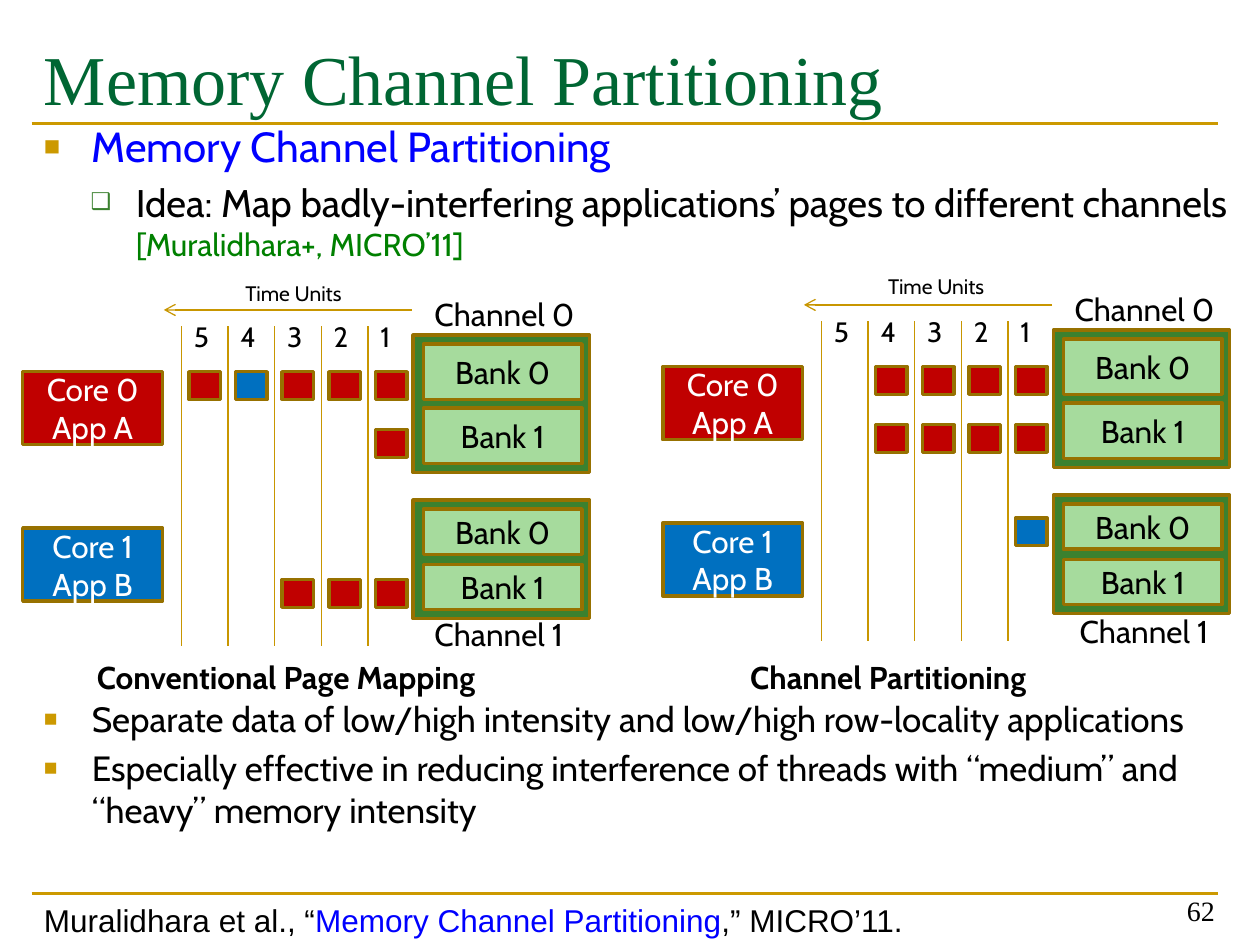
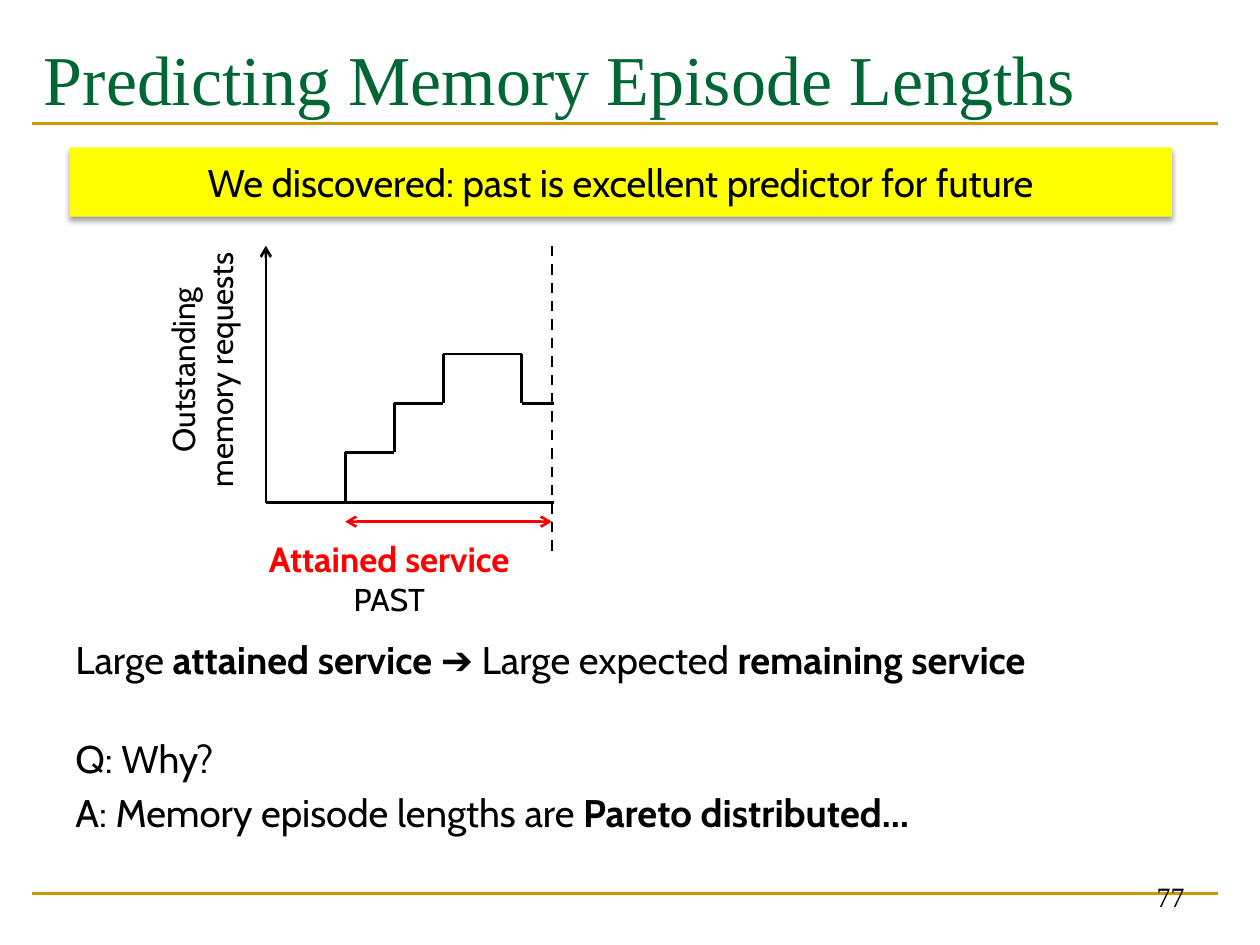
from itertools import pairwise
from lxml import etree
from pptx import Presentation, util as u
from pptx.dml.color import RGBColor
from pptx.enum import dml, shapes, text
from pptx.oxml.ns import qn

# Shared look
HUES = dict(gold="CC9900", axis="C89600", edge="977100", title="006633",
            green="3B812F", bank="A6DB9D", cite="008000", link="0000FF",
            red="C00000", blue="0070C0", hot="FF0000", note="FFFF00",
            black="000000", white="FFFFFF")
SERIF, SANS, ARIAL = "Times New Roman", "Cabin", "Arial"
LEFT, RIGHT, RULES = 0.25, 9.67, (0.98, 7.09)
ALIGN = dict(l=text.PP_ALIGN.LEFT, c=text.PP_ALIGN.CENTER, r=text.PP_ALIGN.RIGHT)
ANCHOR = dict(t=text.MSO_ANCHOR.TOP, m=text.MSO_ANCHOR.MIDDLE, b=text.MSO_ANCHOR.BOTTOM)

# Bullets: glyph, colour, size in percent, left edge, hanging indent
SQUARE = ("■", "gold", 65, 0.38, 0.38)
HOLLOW = ("❑", "green", 60, 0.73, 0.36)

# Content of the channel slide
PAPER = "Memory Channel Partitioning"
INTRO = [[(PAPER, dict(size=24, color="link"))],
         ["Idea: Map badly-interfering applications’ pages to different channels ",
          ("[Muralidhara+, MICRO’11]", dict(size=18, color="cite"))]]
POINTS = ["Separate data of low/high intensity and low/high row-locality applications",
          "Especially effective in reducing interference of threads with "
          "“medium” and “heavy” memory intensity"]
SOURCE = [["Muralidhara et al., “", (PAPER, dict(color="link")), ",” MICRO’11."]]

CORES = [(["Core 0", "App A"], "red", 2.95), (["Core 1", "App B"], "blue", 4.19)]
# Channel: top and height, then top and height of each bank
CHANNELS = [((2.66, 1.09), [(2.73, 0.44), (3.24, 0.44)]),
            ((3.97, 0.94), [(4.04, 0.36), (4.48, 0.36)])]
ROWS = (2.95, 3.41, 4.15, 4.6)  # request rows, one per bank
STEP, UNITS = 0.37, 5           # width and number of time units
# Requests per bank run from time unit 1 upwards (r = red, b = blue)
PANELS = [dict(shift=(0, 0), name="Conventional Page Mapping", mid=2.27,
               time=(1.85, 2.18), last=(3.35, 4.83),
               queues=("rrrbr", "r", "", "rrr")),
          dict(shift=(5.08, -0.04), name="Channel Partitioning", mid=7.05,
               time=(6.95, 2.12), last=(8.47, 4.81),
               queues=("rrrr", "rrrr", "b", ""))]

# Content of the episode slide
FOUND = "We discovered: past is excellent predictor for future"
BOLD = dict(bold=True)
REASON = [["Large ", ("attained service ", BOLD), "➔ Large expected ",
           ("remaining service", BOLD)],
          "Q: Why?",
          ["A: Memory episode lengths are ", ("Pareto distributed…", BOLD)]]
ORIGIN, NOW, PEAK = (2.11, 3.99), 4.38, 1.95
STAIRS = [(2.74, 3.99), (2.74, 3.59), (3.13, 3.59), (3.13, 3.2), (3.52, 3.2),
          (3.52, 2.81), (4.14, 2.81), (4.14, 3.2), (4.4, 3.2)]


def rgb(name):
    return RGBColor.from_string(HUES[name])


def inch(*vals):
    return [u.Inches(v) for v in vals]


def node(up, tag, **attrs):
    kid = etree.SubElement(up, qn("a:" + tag))
    for key, val in attrs.items():
        kid.set(key, str(val))
    return kid


def mark(par, bullet):
    char, hue, size, left, hang = bullet
    ppr = par._p.get_or_add_pPr()
    ppr.set("marL", str(u.Inches(left)))
    ppr.set("indent", str(-u.Inches(hang)))
    node(node(ppr, "buClr"), "srgbClr", val=HUES[hue])
    node(ppr, "buSzPct", val=size * 1000)
    node(ppr, "buFont", typeface=ARIAL)
    node(ppr, "buChar", char=char)


def write(shape, paras, size=18, font=SANS, color="black", bold=False,
          align="l", anchor="t", gaps=(), marks=()):
    """Fill a shape with paragraphs; each is a string or a list of runs."""
    frame = shape.text_frame
    frame.word_wrap = True
    frame.vertical_anchor = ANCHOR[anchor]
    for i, runs in enumerate(paras):
        par = frame.add_paragraph() if i else frame.paragraphs[0]
        par.alignment = ALIGN[align]
        if gaps:
            par.space_before = u.Pt(gaps[i])
        if marks:
            mark(par, marks[i])
        for item in [runs] if isinstance(runs, str) else runs:
            words, own = (item, {}) if isinstance(item, str) else item
            look = dict(size=size, color=color, bold=bold) | own
            run = par.add_run()
            run.text = words
            run.font.name = font
            run.font.size = u.Pt(look["size"])
            run.font.bold = look["bold"]
            run.font.color.rgb = rgb(look["color"])
    return shape


def label(slide, at, paras, **fmt):
    return write(slide.shapes.add_textbox(*inch(*at)), paras, **fmt)


def block(slide, at, fill, paras=(), edge="edge", **fmt):
    box = slide.shapes.add_shape(shapes.MSO_SHAPE.RECTANGLE, *inch(*at))
    box.shadow.inherit = False
    box.fill.solid()
    box.fill.fore_color.rgb = rgb(fill)
    if edge:
        box.line.color.rgb = rgb(edge)
        box.line.width = u.Pt(2)
    else:
        box.line.fill.background()
    return write(box, paras, align="c", anchor="m", **fmt)


def line(slide, start, end, hue="black", width=1.5, heads=(), dash=False):
    wire = slide.shapes.add_connector(shapes.MSO_CONNECTOR.STRAIGHT,
                                      *inch(*start, *end))
    wire.line.color.rgb = rgb(hue)
    wire.line.width = u.Pt(width)
    if dash:
        wire.line.dash_style = dml.MSO_LINE.DASH
    for head in heads:
        node(wire.line._get_or_add_ln(), head, type="arrow")
    node(wire._element.spPr, "effectLst")


def page(deck, title, num, at):
    """Start a slide with its rules, title and page number."""
    slide = deck.slides.add_slide(deck.slide_layouts[6])
    for y in RULES:
        line(slide, (LEFT, y), (RIGHT, y), "gold")
    label(slide, (LEFT, 0.23, RIGHT - LEFT, 1.1), [title],
          size=40, font=SERIF, color="title")
    label(slide, (*at, 2.33, 0.5), [num], size=16, font=SERIF, align="r", anchor="b")
    return slide


def panel(slide, shift, name, mid, time, last, queues):
    dx, dy = shift

    def at(x, y, *size):
        return (x + dx, y + dy, *size)

    # Cores
    for words, hue, y in CORES:
        block(slide, at(0.18, y, 1.11, 0.58), hue, words, color="white")
    # Channels and their banks
    for (top, high), banks in CHANNELS:
        block(slide, at(3.28, top, 1.4, high), "green")
        for n, (y, tall) in enumerate(banks):
            block(slide, at(3.36, y, 1.26, tall), "bank", [f"Bank {n}"])
    label(slide, at(3.35, 2.29, 1.33, 0.4), ["Channel 0"])
    label(slide, (*last, 1.33, 0.4), ["Channel 1"])
    # Time axis
    line(slide, at(3.27, 2.46), at(1.3, 2.46), "axis", 0.75, ["tailEnd"])
    label(slide, (*time, 1.5, 0.3), ["Time Units"], size=12)
    for n in range(UNITS):
        x = 2.92 - n * STEP
        line(slide, at(x, 2.59), at(x, 5.13), "axis", 0.75)
        label(slide, at(x, 2.49, 0.32, 0.37), [str(n + 1)], size=16)
    # Requests
    for y, queue in zip(ROWS, queues):
        for n, kind in enumerate(queue):
            block(slide, at(2.98 - n * STEP, y, 0.25, 0.22),
                  "red" if kind == "r" else "blue")
    label(slide, (mid - 1.9, 5.17, 3.8, 0.4), [name], bold=True, align="c")


def channels(deck):
    slide = page(deck, PAPER, "62", (7.41, 6.91))
    label(slide, (LEFT, 0.91, 9.75, 1.3), INTRO, size=22,
          gaps=(0, 4.4), marks=(SQUARE, HOLLOW))
    label(slide, (LEFT, 5.49, 9.75, 1.1), POINTS, size=20,
          gaps=(0, 4), marks=(SQUARE, SQUARE))
    for part in PANELS:
        panel(slide, **part)
    label(slide, (LEFT, 7.1, 8.83, 0.4), SOURCE, font=ARIAL)


def episodes(deck):
    slide = page(deck, "Predicting Memory Episode Lengths", "77", (7.17, 6.8))
    # Banner with a soft shadow
    box = block(slide, (0.55, 1.17, 8.75, 0.55), "note", [FOUND], edge=None, size=22)
    glow = node(box._element.spPr.find(qn("a:effectLst")), "outerShdw",
                blurRad=u.Pt(3.1), dist=u.Pt(1.8), dir=90 * 60000, rotWithShape=0)
    node(node(glow, "srgbClr", val=HUES["black"]), "alpha", val=35000)
    # Axes and request curve
    line(slide, ORIGIN, (ORIGIN[0], PEAK), heads=["tailEnd"])
    line(slide, ORIGIN, (4.4, ORIGIN[1]))
    for start, end in pairwise(STAIRS):
        line(slide, start, end)
    line(slide, (NOW, PEAK), (NOW, 4.38), dash=True)
    line(slide, (STAIRS[0][0], 4.14), (NOW, 4.14), "hot", heads=["headEnd", "tailEnd"])
    # Labels
    side = label(slide, (0.47, 2.58, 2.27, 0.71),
                 ["Outstanding", "memory requests"], align="c")
    side.rotation = 270
    label(slide, (1.8, 4.22, 2.58, 0.74),
          [[("Attained service", dict(size=20, color="hot", bold=True))], "PAST"],
          align="c")
    label(slide, (0.5, 5, 9, 1.8), REASON, size=22, gaps=(0, 30, 4.4))


def main():
    deck = Presentation()
    deck.slide_width, deck.slide_height = inch(10, 7.5)
    channels(deck)
    episodes(deck)
    deck.save("out.pptx")


if __name__ == "__main__":
    main()
